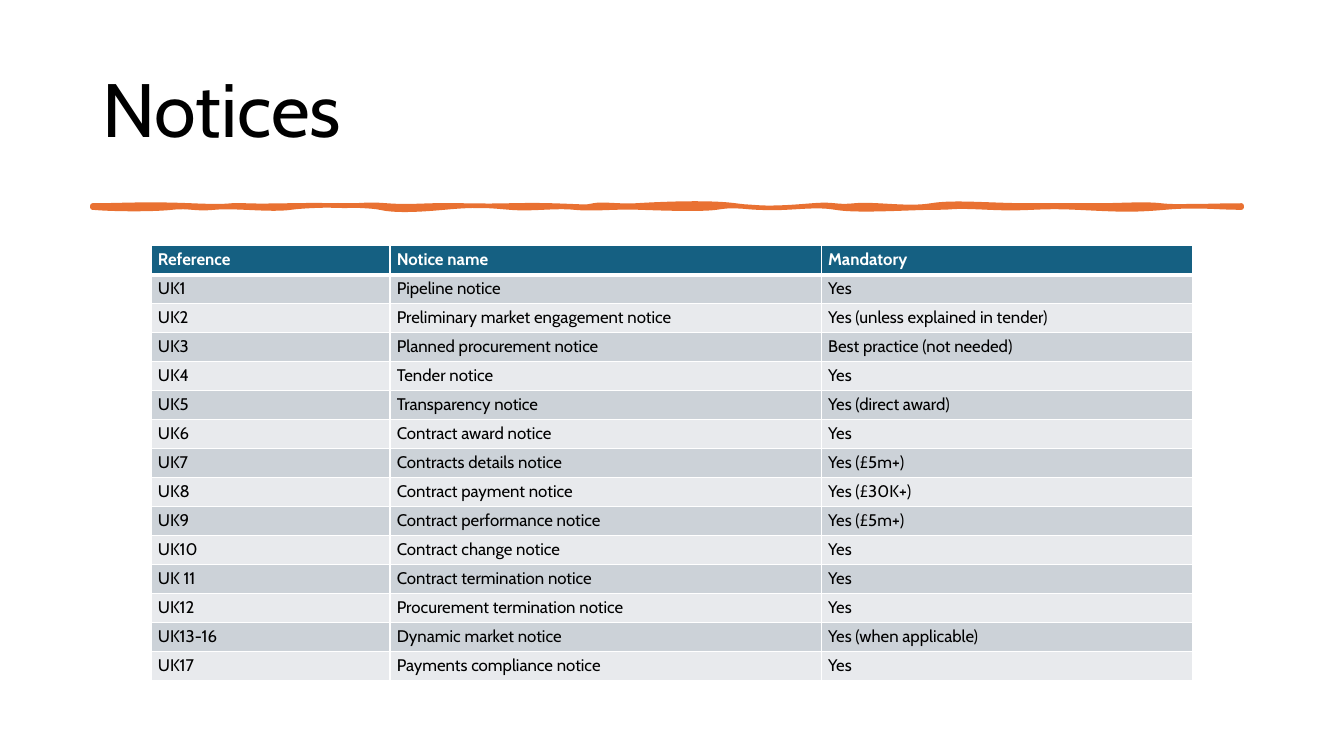
from collections import namedtuple

from lxml.etree import SubElement
from pptx import Presentation
from pptx.dml.color import RGBColor
from pptx.enum.text import MSO_ANCHOR as Anchor, MSO_AUTO_SIZE as AutoSize, PP_ALIGN as Align
from pptx.oxml.ns import qn
from pptx.util import Cm, Pt

Box = namedtuple("Box", "left top width height")

FONT = "Cabin"
BLACK, WHITE, ORANGE = "000000", "FFFFFF", "E97132"
HEADER_FILL, BANDS = "156082", ("CCD2D8", "E8EAED")

COLUMN_WIDTHS = (6.02, 10.87, 9.35)
NOTICES = [
    ("Reference", "Notice name", "Mandatory"),
    ("UK1", "Pipeline notice", "Yes"),
    ("UK2", "Preliminary market engagement notice", "Yes (unless explained in tender)"),
    ("UK3", "Planned procurement notice", "Best practice (not needed)"),
    ("UK4", "Tender notice", "Yes"),
    ("UK5", "Transparency notice", "Yes (direct award)"),
    ("UK6", "Contract award notice", "Yes"),
    ("UK7", "Contracts details notice", "Yes (£5m+)"),
    ("UK8", "Contract payment notice", "Yes (£30K+)"),
    ("UK9", "Contract performance notice", "Yes (£5m+)"),
    ("UK10", "Contract change notice", "Yes"),
    ("UK 11", "Contract termination notice", "Yes"),
    ("UK12", "Procurement termination notice", "Yes"),
    ("UK13-16", "Dynamic market notice", "Yes (when applicable)"),
    ("UK17", "Payments compliance notice", "Yes"),
]

# Brush stroke edges: two control points and an end point for each curve.
# The stroke is 1140 units long and 2 units thick.
STROKE_LENGTH, STROKE_THICKNESS = 1140, 2
TOP_EDGE = [
    ((27, 0), (52, -2), (98, 0)), ((145, 2), (128, -1), (152, 0)),
    ((175, 1), (211, -1), (239, 0)), ((268, 1), (267, -2), (292, 0)),
    ((318, 2), (331, -1), (368, 0)), ((406, 1), (422, -1), (456, 0)),
    ((489, 1), (489, 2), (497, 0)), ((506, -2), (523, 1), (539, 0)),
    ((555, -1), (609, -4), (638, 0)), ((667, 4), (689, 2), (714, 0)),
    ((739, -2), (735, 2), (756, 0)), ((776, -2), (809, 4), (832, 0)),
    ((855, -4), (890, 0), (931, 0)), ((971, 0), (971, 0), (995, 0)),
    ((1020, 0), (1044, -2), (1060, 0)), ((1076, 2), (1111, 0), (1140, 0)),
]
RIGHT_END = [((1140, 1), (1140, 1), (1140, 2))]
BOTTOM_EDGE = [
    ((1113, 2), (1097, -1), (1064, 2)), ((1030, 5), (1018, 4), (976, 2)),
    ((935, 0), (931, 4), (889, 2)), ((847, 0), (860, 2), (836, 2)),
    ((812, 2), (759, 6), (737, 2)), ((714, -2), (690, 4), (661, 2)),
    ((632, 0), (633, 0), (619, 2)), ((606, 4), (569, 3), (543, 2)),
    ((517, 1), (498, 4), (478, 2)), ((459, 0), (436, 4), (414, 2)),
    ((391, 0), (381, -1), (349, 2)), ((317, 5), (298, 5), (285, 2)),
    ((271, -1), (218, -1), (197, 2)), ((176, 5), (143, 0), (121, 2)),
    ((100, 4), (97, 0), (79, 2)), ((62, 4), (22, 4), (0, 2)),
]
LEFT_END = [((0, 1), (0, 1), (0, 0))]
STROKE_CURVES = TOP_EDGE + RIGHT_END + BOTTOM_EDGE + LEFT_END


def color(hex_value):
    return RGBColor.from_string(hex_value)


def add_run(para, text, size, hex_value, bold=False):
    span = para.add_run()
    span.text = text
    span.font.name = FONT
    span.font.size = Pt(size)
    span.font.bold = bold
    span.font.color.rgb = color(hex_value)


def place_title(page, box, text):
    title = page.shapes.title
    title.left, title.top, title.width, title.height = box
    frame = title.text_frame
    frame.auto_size = AutoSize.NONE
    frame.word_wrap = True
    frame.vertical_anchor = Anchor.MIDDLE
    para = frame.paragraphs[0]
    para.alignment = Align.LEFT
    para.line_spacing = 0.9
    add_run(para, text, 54, BLACK)


def bend_segments(shape, curves):
    """Turn each straight segment of a freeform into a cubic Bezier curve."""
    segments = list(shape.element.iter(qn("a:lnTo")))
    for segment, points in zip(segments, curves):
        segment.tag = qn("a:cubicBezTo")
        for point in list(segment):
            segment.remove(point)
        for x, y in points:
            SubElement(segment, qn("a:pt"), x=str(x), y=str(y))


def add_brush_stroke(page, box):
    def scaled(point):
        x, y = point
        return round(x * box.width / STROKE_LENGTH), round(y * box.height / STROKE_THICKNESS)

    curves = [[scaled(point) for point in curve] for curve in STROKE_CURVES]
    builder = page.shapes.build_freeform(0, 0)
    builder.add_line_segments([curve[-1] for curve in curves], close=True)
    stroke = builder.convert_to_shape(box.left, box.top)
    bend_segments(stroke, curves)
    stroke.shadow.inherit = False
    stroke.fill.solid()
    stroke.fill.fore_color.rgb = color(ORANGE)
    stroke.line.color.rgb = color(ORANGE)
    stroke.line.width = Pt(3.25)
    outline = stroke.element.spPr.find(qn("a:ln"))
    SubElement(outline, qn("a:round"))


def add_borders(cell, bottom_width):
    properties = cell._tc.get_or_add_tcPr()
    for side, width in (("L", 1), ("R", 1), ("T", 1), ("B", bottom_width)):
        line = SubElement(properties, qn(f"a:ln{side}"), w=str(Pt(width)))
        fill = SubElement(line, qn("a:solidFill"))
        SubElement(fill, qn("a:srgbClr"), val=WHITE)


def fill_cell(cell, text, row):
    header = row == 0
    cell.margin_left = cell.margin_right = Cm(0.17)
    cell.margin_top = cell.margin_bottom = Cm(0.08)
    add_borders(cell, 3 if header else 1)
    cell.fill.solid()
    cell.fill.fore_color.rgb = color(HEADER_FILL if header else BANDS[(row - 1) % 2])
    add_run(cell.text_frame.paragraphs[0], text, 12, WHITE if header else BLACK, header)


def add_notice_table(page, box):
    table = page.shapes.add_table(len(NOTICES), len(COLUMN_WIDTHS), *box).table
    for column, width in zip(table.columns, COLUMN_WIDTHS):
        column.width = Cm(width)
    for row, texts in enumerate(NOTICES):
        table.rows[row].height = box.height // len(NOTICES)
        for column, text in enumerate(texts):
            fill_cell(table.cell(row, column), text, row)


def build_notices_page(deck):
    page = deck.slides.add_slide(deck.slide_layouts[5])
    place_title(page, Box(Cm(2.33), Cm(1.02), Cm(29.21), Cm(3.68)), "Notices")
    add_brush_stroke(page, Box(Cm(2.33), Cm(5.18), Cm(28.96), Cm(0.05)))
    add_notice_table(page, Box(Cm(3.81), Cm(6.19), Cm(26.24), Cm(10.97)))


def main():
    deck = Presentation()
    deck.slide_width, deck.slide_height = Cm(33.87), Cm(19.05)
    build_notices_page(deck)
    deck.save("out.pptx")


if __name__ == "__main__":
    main()
